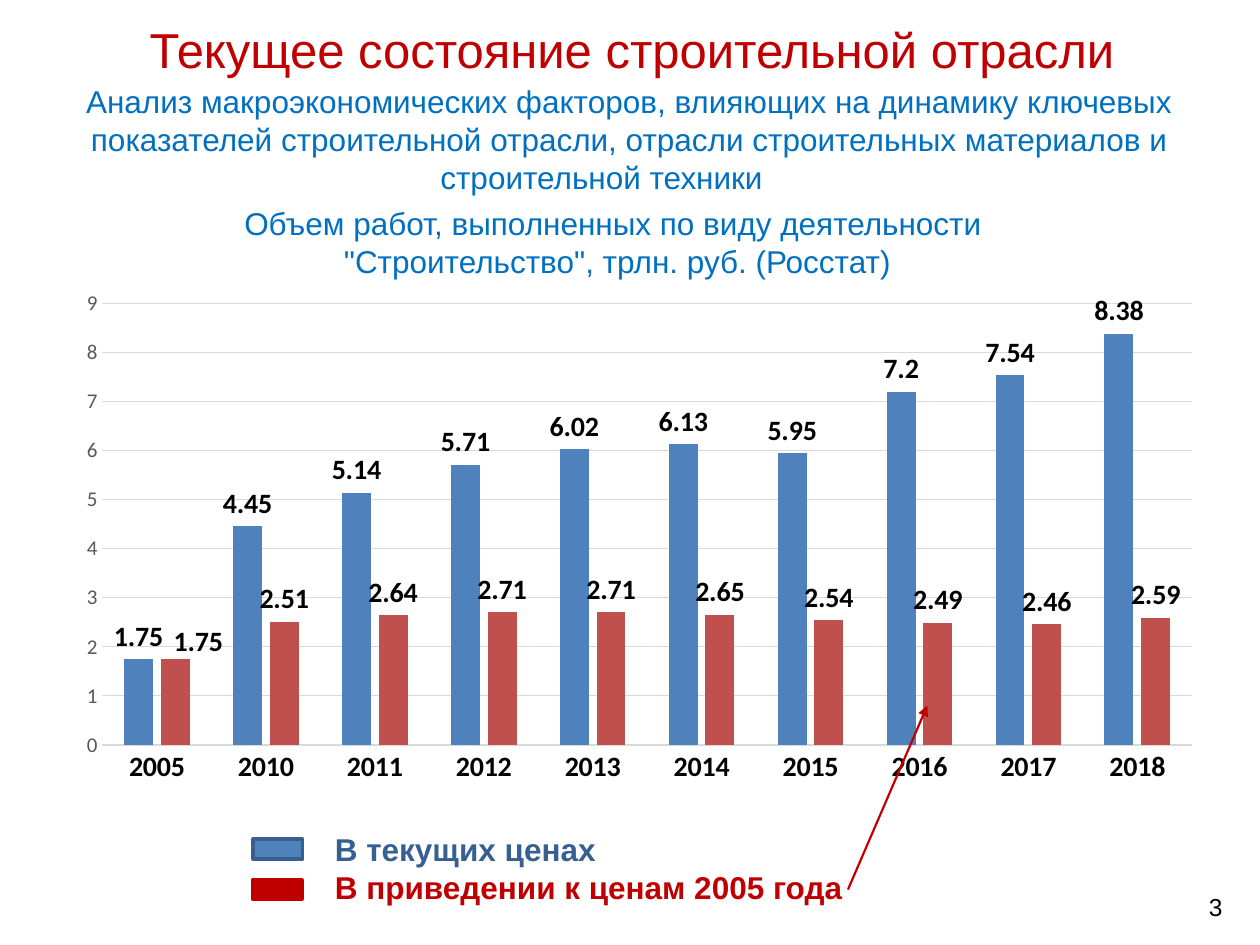
import lxml.etree
import pptx
import pptx.chart.data
import pptx.dml.color
import pptx.enum.chart
import pptx.enum.shapes
import pptx.enum.text
import pptx.oxml
import pptx.oxml.ns
import pptx.util

Inches = pptx.util.Inches
Pt = pptx.util.Pt
ALIGN = pptx.enum.text.PP_ALIGN
ANCHOR = pptx.enum.text.MSO_ANCHOR
AUTO_SIZE = pptx.enum.text.MSO_AUTO_SIZE
qn = pptx.oxml.ns.qn

BLUE = "4F81BD"
RED = "C00000"
HEADING_BLUE = "0070C0"
YEARS = ["2005", *map(str, range(2010, 2019))]
SERIES = [
    ("В текущих ценах", BLUE,
     [1.75, 4.45, 5.14, 5.71, 6.02, 6.13, 5.95, 7.2, 7.54, 8.38]),
    ("В приведении к ценам 2005 года", "C0504D",
     [1.75, 2.51, 2.64, 2.71, 2.71, 2.65, 2.54, 2.49, 2.46, 2.59]),
]


def color(value):
    return pptx.dml.color.RGBColor.from_string(value)


def format_font(font, name, size, hex_color, bold=False):
    font.name = name
    font.size = Pt(size)
    font.color.rgb = color(hex_color)
    font.bold = bold


def place(shape, left, top, width, height):
    shape.left, shape.top = Inches(left), Inches(top)
    shape.width, shape.height = Inches(width), Inches(height)


def fill_text(box, lines, size, colors, align=ALIGN.CENTER,
              anchor=ANCHOR.TOP, bold=False, wrap=True):
    frame = box.text_frame
    frame.text = "\n".join(lines)
    frame.word_wrap = wrap
    frame.vertical_anchor = anchor
    for para, hex_color in zip(frame.paragraphs, colors):
        para.alignment = align
        para.space_before = Pt(0)
        for span in para.runs:
            format_font(span.font, "Arial", size, hex_color, bold)


def add_text(page, bounds, lines, size, colors, **options):
    box = page.shapes.add_textbox(*map(Inches, bounds))
    fill_text(box, lines, size, colors, **options)
    return box


def remove_bullets(box):
    for para in box.text_frame.paragraphs:
        properties = para._p.get_or_add_pPr()
        properties.set("marL", "0")
        properties.set("indent", "0")
        lxml.etree.SubElement(properties, qn("a:buNone"))


def add_layout(neighbour, **values):
    layout = pptx.oxml.parse_xml(
        f"<c:layout {pptx.oxml.ns.nsdecls('c')}><c:manualLayout/></c:layout>")
    for tag, value in values.items():
        lxml.etree.SubElement(layout[0], qn(f"c:{tag}")).set("val", str(value))
    neighbour.addnext(layout)


def format_axis(axis, size, hex_color, bold):
    axis.major_tick_mark = pptx.enum.chart.XL_TICK_MARK.NONE
    axis.minor_tick_mark = pptx.enum.chart.XL_TICK_MARK.NONE
    axis.format.line.fill.background()
    format_font(axis.tick_labels.font, "Calibri", size, hex_color, bold)


def add_volume_chart(page):
    data = pptx.chart.data.CategoryChartData()
    data.categories = YEARS
    for name, _, values in SERIES:
        data.add_series(name, values)
    chart = page.shapes.add_chart(
        pptx.enum.chart.XL_CHART_TYPE.COLUMN_CLUSTERED,
        *map(Inches, (0.43, 2.25, 9.13, 4.12)), data).chart
    chart.has_title = False
    chart.has_legend = False
    format_font(chart.font, "Calibri", 10, "000000")

    format_axis(chart.category_axis, 16, "000000", True)
    value_axis = chart.value_axis
    format_axis(value_axis, 12, "595959", False)
    value_axis.minimum_scale, value_axis.maximum_scale = 0, 9
    value_axis.major_unit = 1
    grid = value_axis.major_gridlines.format.line
    grid.color.rgb = color("D9D9D9")
    grid.width = Pt(0.75)

    plot = chart.plots[0]
    plot.gap_width, plot.overlap = 150, -27
    plot.vary_by_categories = False
    for series, (_, hex_color, _) in zip(plot.series, SERIES):
        series.format.fill.solid()
        series.format.fill.fore_color.rgb = color(hex_color)
        labels = series.data_labels
        labels.show_value = True
        labels.position = pptx.enum.chart.XL_LABEL_POSITION.OUTSIDE_END
        format_font(labels.font, "Calibri", 16, "000000", True)

    shifted = plot.series[1]
    label = shifted.points[0].data_label
    format_font(label.font, "Calibri", 16, "000000", True)
    label.position = pptx.enum.chart.XL_LABEL_POSITION.OUTSIDE_END
    add_layout(shifted._element.find(".//" + qn("c:dLbl")).find(qn("c:idx")),
               x=0.02, y=0.01)

    area = chart._chartSpace.find(".//" + qn("c:plotArea"))
    for old in area.findall(qn("c:layout")):
        area.remove(old)
    marker = lxml.etree.Element(qn("c:layout"))
    area.insert(0, marker)
    add_layout(marker, layoutTarget="inner", xMode="edge", yMode="edge",
               x=0.042, y=0.038, w=0.947, h=0.851)
    area.remove(marker)


def add_legend_key(page, top, fill, line):
    key = page.shapes.add_shape(
        pptx.enum.shapes.MSO_SHAPE.RECTANGLE,
        *map(Inches, (2.01, top, 0.39, 0.16)))
    key.shadow.inherit = False
    key.fill.solid()
    key.fill.fore_color.rgb = color(fill)
    key.line.color.rgb = color(line)
    key.line.width = Pt(2)


def add_arrow(page, start, end):
    arrow = page.shapes.add_connector(
        pptx.enum.shapes.MSO_CONNECTOR.STRAIGHT, *map(Inches, start + end))
    arrow.line.color.rgb = color(RED)
    arrow.line.width = Pt(1.25)
    properties = arrow._element.spPr
    tail = lxml.etree.SubElement(properties.find(qn("a:ln")), qn("a:tailEnd"))
    tail.set("type", "triangle")
    lxml.etree.SubElement(properties, qn("a:effectLst"))


def main():
    deck = pptx.Presentation()
    deck.slide_width, deck.slide_height = Inches(10), Inches(7.5)
    page = deck.slides.add_slide(deck.slide_layouts[1])

    add_text(page, (7.47, 7, 2.33, 0.4), ["3"], 14, ["000000"],
             align=ALIGN.RIGHT, anchor=ANCHOR.MIDDLE)
    add_text(page, (0, 1.57, 9.8, 0.81),
             ["Объем работ, выполненных по виду деятельности ",
              "\"Строительство\", трлн. руб. (Росстат)"],
             18, [HEADING_BLUE] * 2)
    add_volume_chart(page)

    title = page.shapes.title
    place(title, 0.2, 0.02, 9.63, 0.73)
    fill_text(title, ["Текущее состояние строительной отрасли"], 28, [RED],
              anchor=ANCHOR.MIDDLE)

    subtitle = page.placeholders[1]
    place(subtitle, 0.43, 0.6, 9.13, 1.01)
    subtitle.text_frame.text = ""
    fill_text(subtitle,
              ["Анализ макроэкономических факторов, влияющих на динамику "
               "ключевых показателей строительной отрасли, отрасли "
               "строительных материалов и строительной техники\t"],
              18, [HEADING_BLUE])
    remove_bullets(subtitle)
    subtitle.text_frame.auto_size = AUTO_SIZE.SHAPE_TO_FIT_TEXT

    legend = add_text(page, (2.56, 6.54, 4.27, 0.71),
                      [name for name, _, _ in SERIES], 18, ["376092", RED],
                      align=ALIGN.LEFT, bold=True, wrap=False)
    legend.text_frame.auto_size = AUTO_SIZE.SHAPE_TO_FIT_TEXT
    add_arrow(page, (6.73, 7.06), (7.36, 5.6))
    add_legend_key(page, 6.66, BLUE, "3A5F8C")
    add_legend_key(page, 6.98, RED, RED)
    deck.save("out.pptx")


if __name__ == "__main__":
    main()
